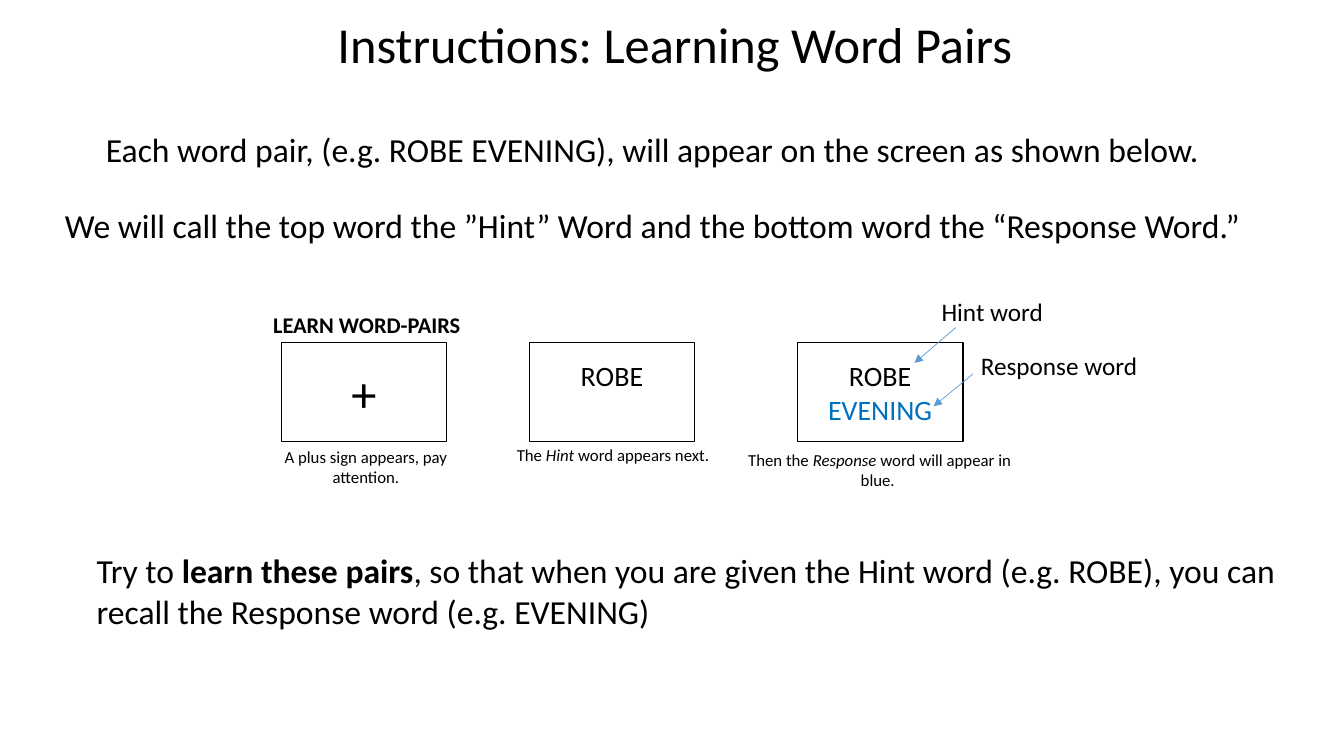
from dataclasses import dataclass

from lxml.etree import SubElement
from pptx import Presentation
from pptx.dml.color import RGBColor
from pptx.enum.shapes import MSO_CONNECTOR as Connector, MSO_SHAPE as Shape
from pptx.enum.text import MSO_ANCHOR as Anchor, PP_ALIGN as Align
from pptx.oxml.ns import qn
from pptx.util import Inches, Pt


@dataclass(frozen=True)
class Theme:
    font: str = "Calibri"
    ink: str = "000000"
    response: str = "0070C0"
    arrow: str = "5B9BD5"
    title: int = 36
    body: int = 24
    word: int = 20
    label: int = 18
    heading: int = 16
    caption: int = 12


class SlideBuilder:
    def __init__(self, page, theme):
        self.page = page
        self.theme = theme

    def fill_para(self, para, runs, size, align):
        """Runs are (text, style) pairs; style is "", "b", "i" or a colour."""
        para.alignment = align
        for text, style in runs:
            span = para.add_run()
            span.text = text
            font = span.font
            font.name, font.size = self.theme.font, Pt(size)
            font.bold, font.italic = style == "b", style == "i"
            color = style if len(style) == 6 else self.theme.ink
            font.color.rgb = RGBColor.from_string(color)

    def text(self, left, top, width, height, runs, size, align=Align.CENTER):
        box = self.page.shapes.add_textbox(
            Inches(left), Inches(top), Inches(width), Inches(height))
        box.text_frame.word_wrap = True
        self.fill_para(box.text_frame.paragraphs[0], runs, size, align)

    def screen(self, left, top, width, height, lines, size, bottom=0.05):
        box = self.page.shapes.add_shape(
            Shape.RECTANGLE, Inches(left), Inches(top), Inches(width), Inches(height))
        box.shadow.inherit = False
        box.fill.background()
        box.line.color.rgb = RGBColor.from_string(self.theme.ink)
        box.line.width = Pt(1)
        frame = box.text_frame
        frame.word_wrap = True
        frame.vertical_anchor = Anchor.MIDDLE
        frame.margin_bottom = Inches(bottom)
        for index, line in enumerate(lines):
            para = frame.add_paragraph() if index else frame.paragraphs[0]
            self.fill_para(para, [line], size, Align.CENTER)

    def arrow(self, start, end):
        points = [Inches(value) for value in (*start, *end)]
        arrow = self.page.shapes.add_connector(Connector.STRAIGHT, *points)
        arrow.line.color.rgb = RGBColor.from_string(self.theme.arrow)
        arrow.line.width = Pt(0.5)
        properties = arrow._element.spPr
        SubElement(properties.find(qn("a:ln")), qn("a:tailEnd"), type="triangle")
        SubElement(properties, qn("a:effectLst"))


def main():
    deck = Presentation()
    deck.slide_width, deck.slide_height = Inches(13.33), Inches(7.5)
    page = deck.slides.add_slide(deck.slide_layouts[6])
    theme = Theme()
    builder = SlideBuilder(page, theme)

    # Title and introduction
    builder.text(3.04, 0.08, 7.31, 0.71,
                 [("Instructions: Learning Word Pairs", "")], theme.title)
    introduction = [
        "Each word pair, (e.g. ROBE EVENING), will appear on the screen as shown below. ",
        "We will call the top word the ”Hint” Word and the bottom word the “Response Word.” ",
    ]
    for index, sentence in enumerate(introduction):
        builder.text(0.53, 1.23 + 0.75 * index, 11.96, 0.5, [(sentence, "")], theme.body)

    # Three screens; the hint sits one line high, leaving room for the response
    screen_top, screen_width, screen_height = 3.4, 1.64, 0.98
    screens = [
        (2.79, [("+", "")], theme.title, 0.05),
        (5.25, [("ROBE", "")], theme.word, 0.39),
        (7.91, [("ROBE", ""), ("EVENING", theme.response)], theme.word, 0.05),
    ]
    for left, lines, size, bottom in screens:
        builder.screen(left, screen_top, screen_width, screen_height, lines, size, bottom)

    # Captions under the screens
    captions = [
        (2.43, 4.38, 2.4, 0.5, [("A plus sign appears, pay attention.", "")]),
        (4.72, 4.36, 2.72, 0.3,
         [("The ", ""), ("Hint", "i"), (" word appears next.", "")]),
        (7.26, 4.41, 2.93, 0.5,
         [("Then the ", ""), ("Response ", "i"), ("word will appear in blue. ", "")]),
    ]
    for *place, runs in captions:
        builder.text(*place, runs, theme.caption)

    # Heading and word labels
    builder.text(2.61, 3.04, 2.09, 0.37, [("LEARN WORD-PAIRS", "b")],
                 theme.heading, Align.LEFT)
    builder.text(9.24, 2.89, 1.44, 0.4, [("Hint word", "")], theme.label, Align.LEFT)
    builder.text(9.63, 3.43, 2.41, 0.4, [("Response word", "")], theme.label, Align.LEFT)

    # Arrows from labels to words
    builder.arrow((9.65, 3.71), (9.26, 4.03))
    builder.arrow((9.48, 3.25), (9.07, 3.6))

    # Closing instruction
    builder.text(0.86, 5.41, 11.96, 0.91, [
        ("Try to ", ""), ("learn these pairs", "b"),
        (", so that when you are given the Hint word (e.g. ROBE), "
         "you can recall the Response word (e.g. EVENING)", ""),
    ], theme.body, Align.LEFT)

    deck.save("out.pptx")


if __name__ == "__main__":
    main()
